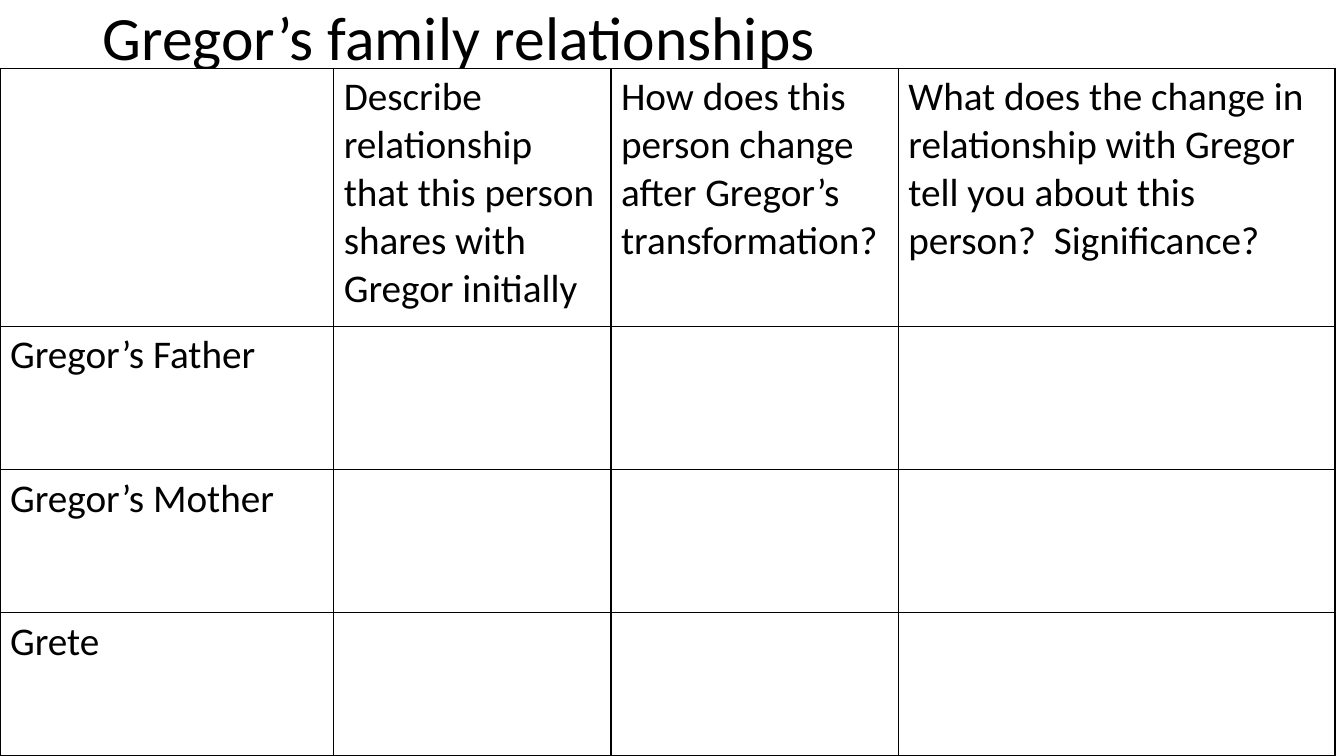
from dataclasses import dataclass

from lxml import etree
from pptx import Presentation
from pptx import util as u
from pptx.dml.color import RGBColor
from pptx.enum import text
from pptx.oxml.ns import qn

WIDTH, HEIGHT = u.Inches(13.33), u.Inches(7.5)
FONT, INK, PAPER = "Calibri", "000000", "FFFFFF"

# Column and row sizes in inches
COLUMNS = [3.31, 2.75, 2.85, 4.33]
HEADER_ROW, PERSON_ROW = 2.56, 1.42
TABLE_TOP = 0.68

QUESTIONS = [
    "Describe relationship that this person shares with Gregor initially",
    "How does this person change after Gregor’s transformation?",
    "What does the change in relationship with Gregor tell you about this person?  Significance?",
]
PEOPLE = ["Gregor’s Father", "Gregor’s Mother", "Grete"]


@dataclass
class Label:
    row: int
    column: int
    words: str


def colour(value: str) -> RGBColor:
    return RGBColor.from_string(value)


def write(para, words: str, size: int) -> None:
    span = para.add_run()
    span.text = words
    span.font.name = FONT
    span.font.size = u.Pt(size)
    span.font.bold = False
    span.font.color.rgb = colour(INK)


def style_cell(cell) -> None:
    """Outline a cell in black, then fill it with the paper colour."""
    properties = cell._tc.get_or_add_tcPr()
    for side in ("a:lnL", "a:lnR", "a:lnT", "a:lnB"):
        line = etree.SubElement(properties, qn(side), w=str(u.Pt(1)))
        paint = etree.SubElement(line, qn("a:solidFill"))
        etree.SubElement(paint, qn("a:srgbClr"), val=INK)
    cell.fill.solid()
    cell.fill.fore_color.rgb = colour(PAPER)


def add_title(page) -> None:
    box = page.shapes.add_textbox(
        u.Inches(0.92), u.Inches(-0.01), u.Inches(11.5), u.Inches(0.82))
    frame = box.text_frame
    frame.word_wrap = True
    frame.vertical_anchor = text.MSO_ANCHOR.MIDDLE
    para = frame.paragraphs[0]
    para.line_spacing = 0.9
    write(para, "Gregor’s family relationships", 44)


def add_grid(page, labels: list[Label]) -> None:
    rows = [HEADER_ROW] + [PERSON_ROW] * len(PEOPLE)
    grid = page.shapes.add_table(
        len(rows), len(COLUMNS), 0, u.Inches(TABLE_TOP),
        u.Inches(sum(COLUMNS)), u.Inches(sum(rows))).table
    grid.first_row = grid.horz_banding = False
    for column, width in zip(grid.columns, COLUMNS):
        column.width = u.Inches(width)
    for row, height in zip(grid.rows, rows):
        row.height = u.Inches(height)
    for cell in grid.iter_cells():
        style_cell(cell)
    for label in labels:
        cell = grid.cell(label.row, label.column)
        write(cell.text_frame.paragraphs[0], label.words, 28)


def main() -> None:
    deck = Presentation()
    deck.slide_width, deck.slide_height = WIDTH, HEIGHT
    page = deck.slides.add_slide(deck.slide_layouts[6])

    # Title
    add_title(page)

    # Questions across the top, people down the side
    labels = [Label(0, column, words) for column, words in enumerate(QUESTIONS, 1)]
    labels += [Label(row, 0, words) for row, words in enumerate(PEOPLE, 1)]
    add_grid(page, labels)

    deck.save("out.pptx")


if __name__ == "__main__":
    main()
